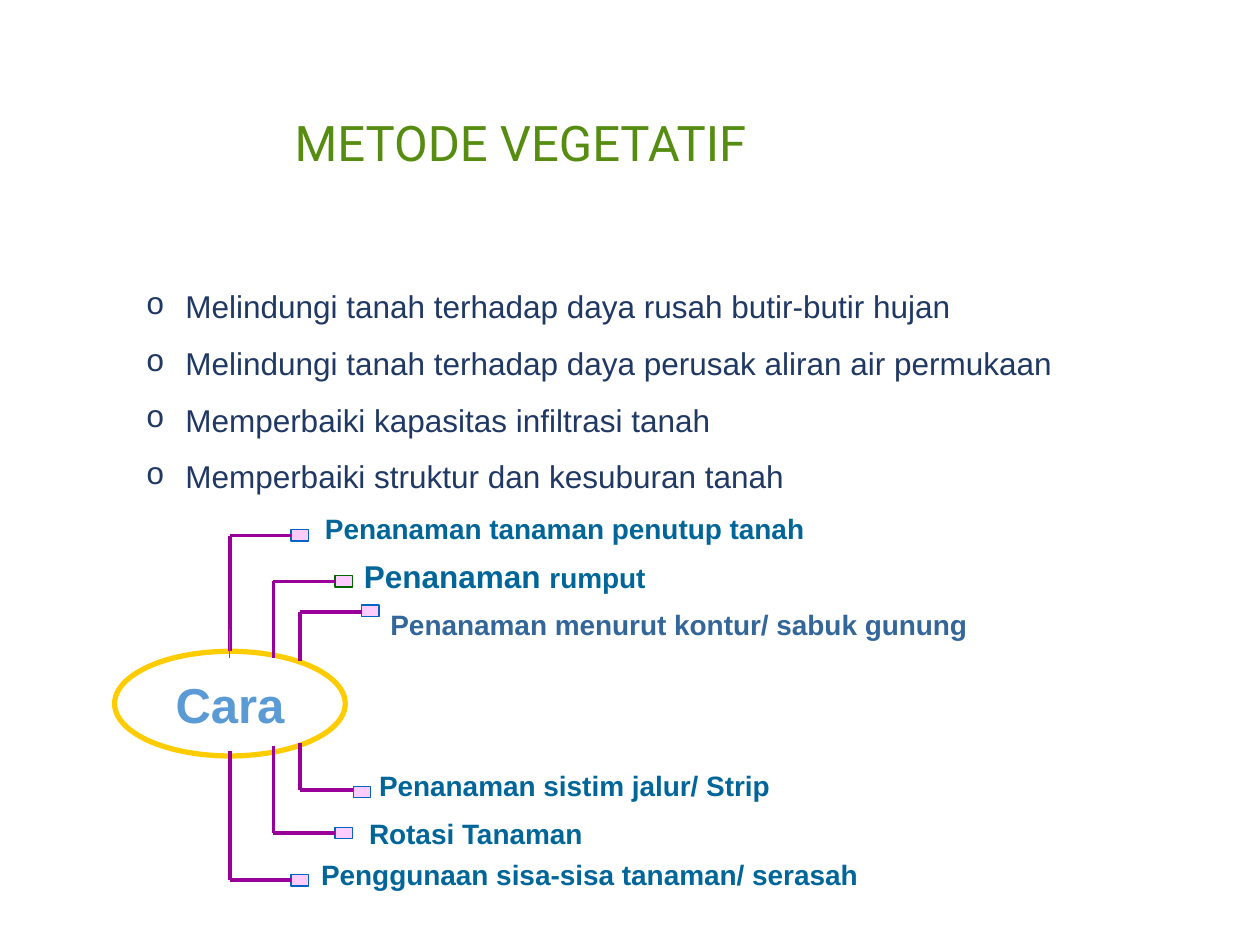
from dataclasses import dataclass

from lxml import etree
from pptx import Presentation
from pptx.dml.color import RGBColor
from pptx.enum import shapes, text
from pptx.oxml import ns
from pptx.util import Pt

GREEN = RGBColor(0x56, 0x8D, 0x11)
NAVY = RGBColor(0x20, 0x38, 0x64)
TEAL = RGBColor(0x00, 0x66, 0x99)
SLATE = RGBColor(0x33, 0x66, 0x99)
SKY = RGBColor(0x5B, 0x9B, 0xD5)
PURPLE = RGBColor(0x99, 0x00, 0x99)
PINK = RGBColor(0xFF, 0xCC, 0xFF)
BLUE = RGBColor(0x05, 0x63, 0xC1)
DARK_GREEN = RGBColor(0x00, 0x66, 0x00)
BRIGHT_GREEN = RGBColor(0x00, 0xA8, 0x00)
GOLD = RGBColor(0xFF, 0xCC, 0x00)
WHITE = RGBColor(0xFF, 0xFF, 0xFF)

MARKER_W, MARKER_H = 10, 6.5
LABEL_H = 26.6


@dataclass
class Run:
    text: str
    size: float = 16
    color: RGBColor = TEAL
    bold: bool = True
    font: str = "Arial"


@dataclass
class Branch:
    x: float            # trunk position
    root: float         # where the trunk leaves the ellipse
    y: float            # height of the arm
    marker_x: float
    label_x: float
    label_y: float
    label_w: float
    runs: list[Run]
    marker_dy: float = 0
    marker_line: RGBColor = BLUE


BULLETS = [
    "Melindungi tanah terhadap daya rusah butir-butir hujan",
    "Melindungi tanah terhadap daya perusak aliran air permukaan",
    "Memperbaiki kapasitas infiltrasi tanah",
    "Memperbaiki struktur dan kesuburan tanah",
]

BRANCHES = [
    Branch(131.3, 372.2, 306, 166.3, 178.6, 288.7, 291.6,
           [Run("Penanaman tanaman penutup tanah")]),
    Branch(156.3, 376, 332.3, 191.5, 200.9, 314.6, 277.9,
           [Run("Penanaman ", 18), Run("rumput")], marker_line=DARK_GREEN),
    Branch(171.4, 377.5, 349.7, 206.6, 216, 343.4, 344.9,
           [Run("Penanaman menurut kontur/ sabuk gunung", color=SLATE)], -0.8),
    Branch(171.4, 424.3, 451.6, 201.8, 209.5, 435.6, 272.9,
           [Run("Penanaman sistim jalur/ Strip")], 1),
    Branch(156.3, 426.2, 476.1, 191.5, 203.8, 463, 205.9,
           [Run("Rotasi Tanaman")]),
    Branch(131.3, 429.3, 503, 166.3, 176.4, 486.7, 344.9,
           [Run("Penggunaan sisa-sisa tanaman/ serasah")]),
]


def add_runs(p, runs: list[Run]) -> None:
    for run in runs:
        r = p.add_run()
        r.text = run.text
        r.font.name, r.font.size, r.font.bold = run.font, Pt(run.size), run.bold
        r.font.color.rgb = run.color


def add_text(s, x: float, y: float, w: float, h: float, runs: list[Run]):
    tf = s.shapes.add_textbox(Pt(x), Pt(y), Pt(w), Pt(h)).text_frame
    tf.word_wrap = True
    add_runs(tf.paragraphs[0], runs)
    return tf


def add_bullet(p) -> None:
    pPr = p._p.get_or_add_pPr()
    pPr.set("marL", str(Pt(22.5)))
    pPr.set("indent", str(-Pt(22.5)))
    etree.SubElement(pPr, ns.qn("a:buFont")).set("typeface", "Courier New")
    etree.SubElement(pPr, ns.qn("a:buChar")).set("char", "o")


def add_outlined(s, kind, x: float, y: float, w: float, h: float,
                 fill: RGBColor, line: RGBColor, width: float):
    sp = s.shapes.add_shape(kind, Pt(x), Pt(y), Pt(w), Pt(h))
    sp.shadow.inherit = False
    sp.fill.solid()
    sp.fill.fore_color.rgb = fill
    sp.line.color.rgb = line
    sp.line.width = Pt(width)
    return sp


def add_line(s, x1: float, y1: float, x2: float, y2: float,
             color: RGBColor = PURPLE, width: float = 2.25):
    c = s.shapes.add_connector(shapes.MSO_CONNECTOR.STRAIGHT,
                               Pt(x1), Pt(y1), Pt(x2), Pt(y2))
    c.line.color.rgb = color
    c.line.width = Pt(width)
    etree.SubElement(c._element.spPr, ns.qn("a:effectLst"))
    return c


def add_branch(s, b: Branch) -> None:
    add_text(s, b.label_x, b.label_y, b.label_w, LABEL_H, b.runs)
    add_line(s, b.x, b.root, b.x, b.y)
    marker = add_outlined(s, shapes.MSO_SHAPE.RECTANGLE, b.marker_x,
                          b.y + b.marker_dy - MARKER_H / 2, MARKER_W, MARKER_H,
                          PINK, b.marker_line, 0.75)
    arm = add_line(s, b.x, b.y, b.marker_x, b.y)
    if b.marker_dy == 0:
        arm.end_connect(marker, 1)


def main() -> None:
    prs = Presentation()
    prs.slide_width, prs.slide_height = Pt(720), Pt(540)
    s = prs.slides.add_slide(prs.slide_layouts[6])

    # Title
    tf = add_text(s, 150.5, 60.5, 293.8, 41,
                  [Run("METODE VEGETATIF", 28, GREEN, False, "Roboto")])
    tf.paragraphs[0].alignment = text.PP_ALIGN.CENTER

    # Benefits
    tf = add_text(s, 76.3, 149.8, 577.4, 203.8, [])
    for i, line in enumerate(BULLETS):
        p = tf.add_paragraph() if i else tf.paragraphs[0]
        p.line_spacing = 1.5
        add_bullet(p)
        add_runs(p, [Run(line, 18, NAVY, False)])

    # Hub
    hub = add_outlined(s, shapes.MSO_SHAPE.OVAL, 65.5, 372.2, 131.8, 59.8,
                       WHITE, GOLD, 3)
    tf = hub.text_frame
    tf.word_wrap = False
    tf.vertical_anchor = text.MSO_ANCHOR.MIDDLE
    tf.paragraphs[0].alignment = text.PP_ALIGN.CENTER
    add_runs(tf.paragraphs[0], [Run("Cara", 28, SKY)])

    # Branches
    for b in BRANCHES:
        add_branch(s, b)
    add_line(s, 131.3, 375.8, 131.3, 359.3, BRIGHT_GREEN, 0.75)

    prs.save("out.pptx")


if __name__ == "__main__":
    main()
